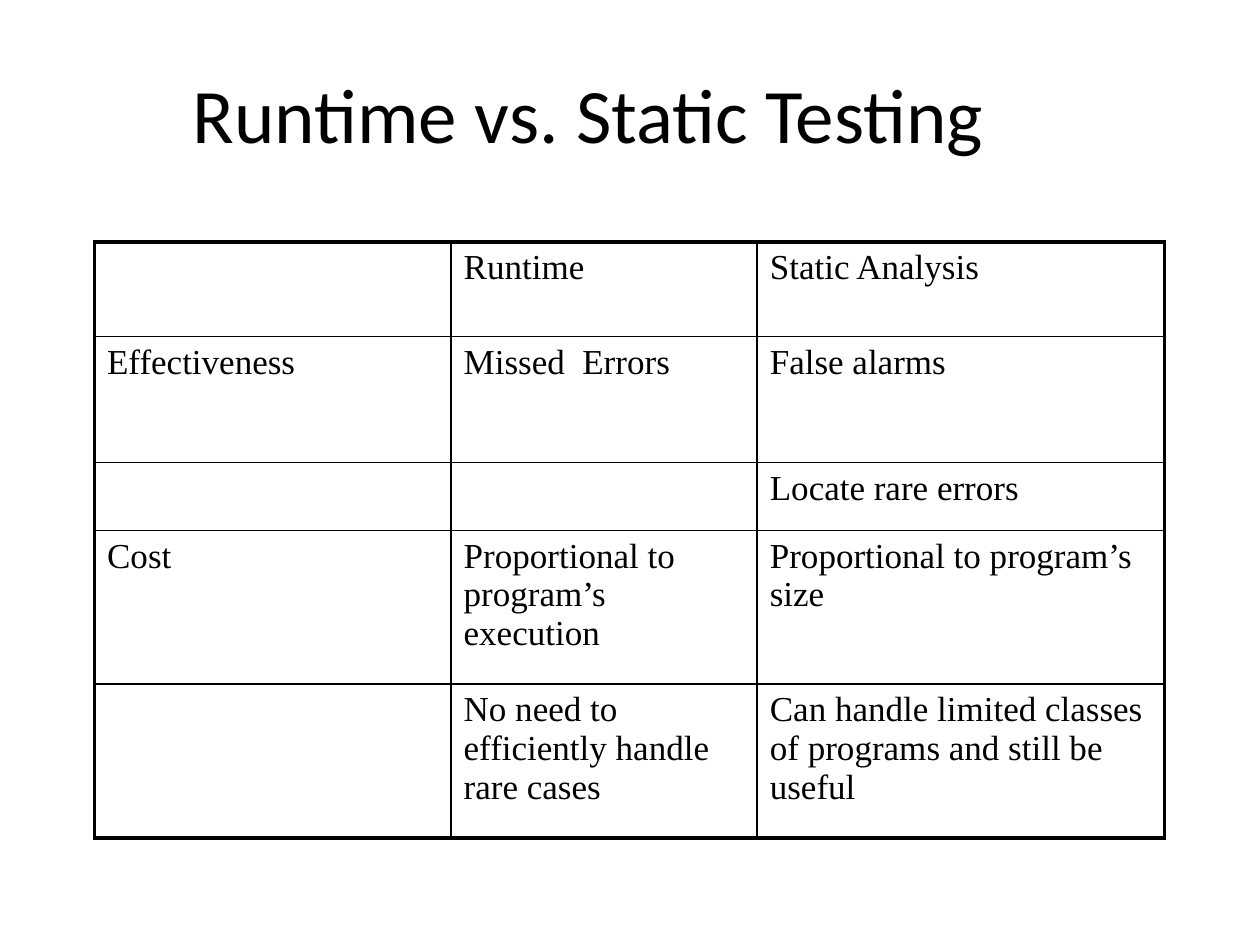
from lxml.etree import SubElement
from pptx import Presentation
from pptx.dml.color import RGBColor
from pptx.enum.text import MSO_ANCHOR, PP_ALIGN
from pptx.oxml.ns import qn
from pptx.util import Inches, Pt

COLORS = {"ink": "000000"}
TITLE = "Runtime vs. Static Testing"
COMPARISON = [
    ("", "Runtime", "Static Analysis"),
    ("Effectiveness", "Missed  Errors", "False alarms"),
    ("", "", "Locate rare errors"),
    ("Cost", "Proportional to program’s execution", "Proportional to program’s size"),
    ("", "No need to efficiently handle rare cases",
     "Can handle limited classes of programs and still be useful"),
]
COLUMN_WIDTHS = [2.83, 2.43, 3.23]
ROW_HEIGHTS = [0.75, 1, 0.54, 1.22, 1.22]
OUTER_LINE, INNER_LINE = 2.25, 1


def style_text(paragraph, font_name, size):
    paragraph.font.name = font_name
    paragraph.font.size = Pt(size)
    paragraph.font.color.rgb = RGBColor.from_string(COLORS["ink"])


def add_borders(cell, outer_sides):
    properties = cell._tc.get_or_add_tcPr()
    for side, is_outer in outer_sides.items():
        width = Pt(OUTER_LINE if is_outer else INNER_LINE)
        line = SubElement(properties, qn(f"a:ln{side}"), w=str(width))
        fill = SubElement(line, qn("a:solidFill"))
        SubElement(fill, qn("a:srgbClr"), val=COLORS["ink"])


def add_title(slide):
    title = slide.shapes.add_textbox(Inches(0.42), Inches(0.29), Inches(8.5), Inches(1.21))
    title.text_frame.word_wrap = True
    title.text_frame.vertical_anchor = MSO_ANCHOR.MIDDLE
    heading = title.text_frame.paragraphs[0]
    heading.text = TITLE
    heading.alignment = PP_ALIGN.CENTER
    style_text(heading, "Calibri", 44)


def add_comparison(slide):
    last_row, last_column = len(ROW_HEIGHTS) - 1, len(COLUMN_WIDTHS) - 1
    table = slide.shapes.add_table(
        len(ROW_HEIGHTS), len(COLUMN_WIDTHS), Inches(0.75), Inches(1.92),
        Inches(sum(COLUMN_WIDTHS)), Inches(sum(ROW_HEIGHTS))).table
    table.first_row = table.horz_banding = False
    for column, width in zip(table.columns, COLUMN_WIDTHS):
        column.width = Inches(width)
    for row, height in zip(table.rows, ROW_HEIGHTS):
        row.height = Inches(height)
    for r, entries in enumerate(COMPARISON):
        for c, entry in enumerate(entries):
            cell = table.cell(r, c)
            cell.text = entry
            style_text(cell.text_frame.paragraphs[0], "Times New Roman", 20)
            add_borders(cell, {"L": c == 0, "R": c == last_column,
                               "T": r == 0, "B": r == last_row})
            cell.fill.background()


def main():
    deck = Presentation()
    deck.slide_width, deck.slide_height = Inches(10), Inches(7.5)
    slide = deck.slides.add_slide(deck.slide_layouts[6])
    add_title(slide)
    add_comparison(slide)
    deck.save("out.pptx")


if __name__ == "__main__":
    main()
